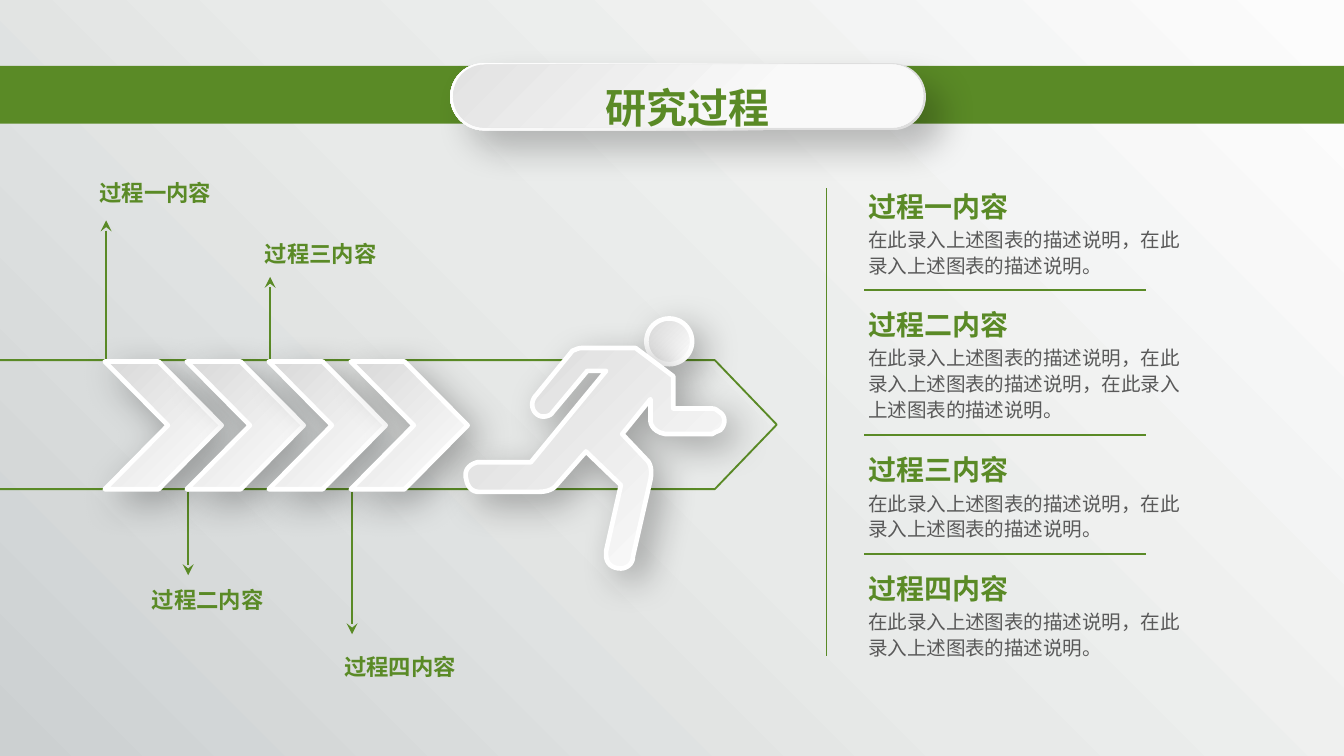
from pptx import Presentation
from pptx.enum import shapes, text
from pptx.oxml import parse_xml
from pptx.oxml import ns
from pptx.util import Inches, Pt
from pptx.dml.color import RGBColor

FONT = "Noto Sans CJK SC"
WIDTH = 10
HEIGHT = WIDTH * 9 / 16
COLORS = {"green": "5A8A26", "body": "595959", "edge": "FFFFFF", "shadow": "000000"}
BACKDROP = [(0, "CCD0D1"), (49, "E8EAE9"), (100, "FCFCFC")]
PILL_RIM = [(1, "DEDEDE"), (30, "E0E0E0"), (61, "F6F6F6"), (100, "FFFFFF")]
PILL_FACE = [(0, "E3E3E3"), (67, "F9F9F9")]
PAPER = [(0, "D9D9D9"), (100, "FFFFFF")]
KIND = shapes.MSO_SHAPE
PHRASE = "在此录入上述图表的描述说明"
STAGES = [("过程一内容", 2), ("过程二内容", 3), ("过程三内容", 2), ("过程四内容", 2)]
CALLOUTS = [(0.67, 1.29, 1.64), (1.06, 4.32, 4.28), (1.9, 1.75, 2.06), (2.49, 4.82, 4.72)]
RUNNER = [
    (3.55, 3.44), (3.95, 3.44), (4.51, 2.76), (4.37, 2.76), (4.11, 3.07),
    (4.1, 3.09, 4.07, 3.1, 4.04, 3.1), (4, 3.1, 3.96, 3.06, 3.96, 3.01),
    (3.96, 2.99, 3.97, 2.96, 3.99, 2.94), (4.26, 2.61),
    (4.29, 2.6, 4.3, 2.59, 4.33, 2.59), (4.73, 2.59), (5.01, 2.8), (5.01, 3.04),
    (5.3, 3.04), (5.33, 3.04, 5.34, 3.06, 5.36, 3.07),
    (5.4, 3.1, 5.4, 3.16, 5.36, 3.2), (5.34, 3.21, 5.33, 3.21, 5.3, 3.23),
    (4.95, 3.23), (4.84, 3.21, 4.84, 3.13, 4.84, 3.13), (4.84, 2.97), (4.63, 3.23),
    (4.82, 3.43), (4.82, 3.43, 4.86, 3.47, 4.84, 3.57), (4.71, 4.14),
    (4.71, 4.2, 4.66, 4.23, 4.62, 4.23), (4.55, 4.23, 4.51, 4.19, 4.51, 4.13),
    (4.51, 4.1), (4.62, 3.61), (4.36, 3.36), (4.14, 3.61),
    (4.14, 3.61, 4.11, 3.66, 4.01, 3.66), (3.56, 3.66),
    (3.52, 3.66, 3.48, 3.63, 3.47, 3.57), (3.45, 3.51, 3.48, 3.46, 3.55, 3.44),
]


def rgb(name):
    """Return the palette colour called name."""
    return RGBColor.from_string(COLORS[name])


def set_gradient(shape, stops, angle):
    """Fill a shape with a linear gradient, its angle clockwise in degrees."""
    shape.fill.gradient()
    props = shape._element.spPr
    marks = "".join(f'<a:gs pos="{pos * 1000}"><a:srgbClr val="{color}"/></a:gs>'
                    for pos, color in stops)
    props.replace(props.find(ns.qn("a:gradFill")), parse_xml(
        f'<a:gradFill {ns.nsdecls("a")} rotWithShape="1"><a:gsLst>{marks}</a:gsLst>'
        f'<a:lin ang="{angle * 60000}" scaled="0"/></a:gradFill>'))


def style(shape, fill=None, stops=None, angle=45, edge=None, width=1, shadow=None):
    """Set the fill, edge and shadow (opacity, blur, distance) of a shape."""
    shape.shadow.inherit = False
    if stops:
        set_gradient(shape, stops, angle)
    elif fill:
        shape.fill.solid()
        shape.fill.fore_color.rgb = rgb(fill)
    else:
        shape.fill.background()
    if edge:
        shape.line.color.rgb = rgb(edge)
        shape.line.width = Pt(width)
    else:
        shape.line.fill.background()
    if shadow:
        opacity, blur, distance = shadow
        shape._element.spPr.find(ns.qn("a:effectLst")).append(parse_xml(
            f'<a:outerShdw {ns.nsdecls("a")} blurRad="{Pt(blur)}" dist="{Pt(distance)}" '
            f'dir="2700000" algn="tl" rotWithShape="0"><a:srgbClr val="{COLORS["shadow"]}">'
            f'<a:alpha val="{opacity * 1000}"/></a:srgbClr></a:outerShdw>'))


def add_preset(slide, kind, box, adjust=None, **look):
    """Add a styled preset shape."""
    shape = slide.shapes.add_shape(kind, *map(Inches, box))
    if adjust is not None:
        shape.adjustments[0] = adjust
    style(shape, **look)


def add_line(slide, start, end, arrow=False):
    """Add a thin green line, with an arrowhead at its start if asked."""
    line = slide.shapes.add_connector(
        shapes.MSO_CONNECTOR.STRAIGHT, *map(Inches, start + end))
    line.line.color.rgb = rgb("green")
    line.line.width = Pt(1)
    props = line._element.spPr
    if arrow:
        props.find(ns.qn("a:ln")).append(
            parse_xml(f'<a:headEnd {ns.nsdecls("a")} type="stealth"/>'))
    props.append(parse_xml(f'<a:effectLst {ns.nsdecls("a")}/>'))


def write(frame, words, size, color="green", bold=True, spacing=None, align=None, wrap=True):
    """Put one formatted paragraph in a text frame."""
    frame.word_wrap = wrap
    frame.auto_size = text.MSO_AUTO_SIZE.SHAPE_TO_FIT_TEXT
    frame.vertical_anchor = text.MSO_ANCHOR.TOP
    paragraph = frame.paragraphs[0]
    paragraph.line_spacing = spacing
    paragraph.alignment = align
    run = paragraph.add_run()
    run.text = words
    run.font.size = Pt(size)
    run.font.bold = bold
    run.font.color.rgb = rgb(color)
    run.font.name = FONT
    run._r.get_or_add_rPr().append(
        parse_xml(f'<a:ea {ns.nsdecls("a")} typeface="{FONT}"/>'))


def add_label(slide, box, words, size, **look):
    """Add a text box with narrow margins."""
    frame = slide.shapes.add_textbox(*map(Inches, box)).text_frame
    frame.margin_left = frame.margin_right = Inches(0.07)
    frame.margin_top = frame.margin_bottom = Inches(0.04)
    write(frame, words, size, **look)


def trace(outline, steps=8):
    """Turn corners and Bezier segments into a list of points."""
    points = [outline[0]]
    for segment in outline[1:]:
        if len(segment) == 2:
            points.append(segment)
            continue
        knots = [points[-1], segment[:2], segment[2:4], segment[4:]]
        for step in range(1, steps + 1):
            t = step / steps
            weights = ((1 - t) ** 3, 3 * t * (1 - t) ** 2, 3 * t * t * (1 - t), t ** 3)
            points.append(tuple(sum(w * knot[axis] for w, knot in zip(weights, knots))
                                for axis in (0, 1)))
    return points


def add_header(slide):
    """Draw the green band, the pill and the title."""
    add_preset(slide, KIND.RECTANGLE, (-0.01, 0.49, 10.01, 0.43), fill="green")
    add_preset(slide, KIND.ROUNDED_RECTANGLE, (3.35, 0.47, 3.54, 0.5), 0.5,
               stops=PILL_RIM, angle=225, shadow=(24, 19, 14))
    add_preset(slide, KIND.ROUNDED_RECTANGLE, (3.37, 0.48, 3.5, 0.47), 0.5, stops=PILL_FACE)
    title = slide.shapes.title
    title.left, title.top, title.width, title.height = map(Inches, (3.89, 0.45, 2.45, 0.58))
    write(title.text_frame, "研究过程", 22, spacing=1.3, align=text.PP_ALIGN.CENTER)
    slide.shapes._spTree.append(title._element)


def add_process(slide):
    """Draw the track with its chevrons, callouts and runner."""
    paper = dict(stops=PAPER, edge="edge", width=2.5, shadow=(30, 20, 8))
    lefts = [0.78 + 0.61 * i for i in range(len(STAGES))]
    for left, (_, _, tip) in zip(lefts, CALLOUTS):
        base = 2.68 if tip < 2.68 else 3.66
        add_line(slide, (left + 0.01, tip), (left + 0.01, base), arrow=True)
    add_preset(slide, KIND.PENTAGON, (-0.05, 2.68, 5.83, 0.96), 0.48, edge="green")
    for left in lefts:
        add_preset(slide, KIND.CHEVRON, (left, 2.69, 0.87, 0.95), 0.54, **paper)
    add_preset(slide, KIND.OVAL, (4.81, 2.37, 0.34, 0.34), **paper)
    points = [tuple(map(Inches, point)) for point in trace(RUNNER)]
    builder = slide.shapes.build_freeform(*points[0])
    builder.add_line_segments(points[1:], close=True)
    style(builder.convert_to_shape(), **paper)
    for (name, _), (left, top, _) in zip(STAGES, CALLOUTS):
        add_label(slide, (left, top, 0.99, 0.28), name, 12, wrap=False)


def add_sidebar(slide):
    """List the stages with their descriptions, parted by rules."""
    add_line(slide, (6.15, 1.4), (6.15, 4.88))
    top = 1.37
    for i, (name, repeats) in enumerate(STAGES):
        if i:
            add_line(slide, (6.43, top - 0.09), (8.53, top - 0.09))
        height = 0.06 + 0.2 * repeats
        add_label(slide, (6.39, top, 1.2, 0.33), name, 15, wrap=False)
        add_label(slide, (6.39, top + 0.27, 2.59, height), "，".join([PHRASE] * repeats) + "。",
                  10.5, color="body", bold=False, spacing=1.1)
        top += height + 0.42


def main():
    """Build the slide and save it."""
    deck = Presentation()
    deck.slide_width, deck.slide_height = Inches(WIDTH), Inches(HEIGHT)
    slide = deck.slides.add_slide(deck.slide_layouts[5])
    for top in (0, 0.49):
        add_preset(slide, KIND.RECTANGLE, (0, top, WIDTH, HEIGHT - top),
                   stops=BACKDROP, angle=315)
    add_header(slide)
    add_process(slide)
    add_sidebar(slide)
    deck.save("out.pptx")


if __name__ == "__main__":
    main()
